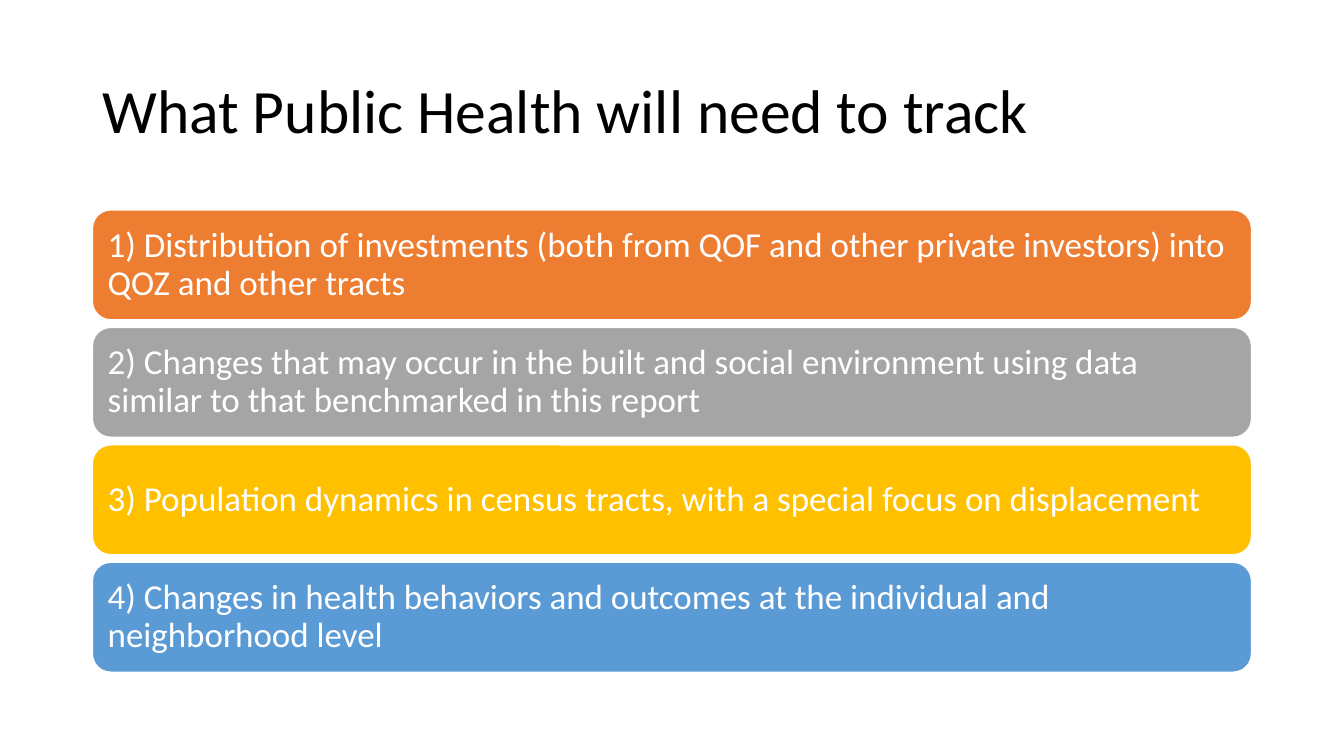
import dataclasses

import pptx
import pptx.dml.color
import pptx.enum.shapes
import pptx.enum.text
import pptx.util

Cm = pptx.util.Cm
LEFT, WIDTH = 2.33, 29.21
TOP, HEIGHT, PITCH = 5.29, 2.77, 2.96


@dataclasses.dataclass
class Band:
    text: str
    fill: str


BANDS = [
    Band("1) Distribution of investments (both from QOF and other private investors) "
         "into QOZ and other tracts", "ED7D31"),
    Band("2) Changes that may occur in the built and social environment using data "
         "similar to that benchmarked in this report", "A5A5A5"),
    Band("3) Population dynamics in census tracts, with a special focus on "
         "displacement", "FFC000"),
    Band("4) Changes in health behaviors and outcomes at the individual and "
         "neighborhood level", "5B9BD5"),
]


def paint(color: pptx.dml.color.ColorFormat, code: str) -> None:
    color.rgb = pptx.dml.color.RGBColor.from_string(code)


def write(shape, text: str, *, size: float, color: str, inset: float = 0.25) -> None:
    frame = shape.text_frame
    frame.word_wrap = True
    frame.auto_size = pptx.enum.text.MSO_AUTO_SIZE.NONE
    frame.vertical_anchor = pptx.enum.text.MSO_ANCHOR.MIDDLE
    frame.margin_left = frame.margin_right = Cm(inset)
    frame.margin_top = frame.margin_bottom = Cm(inset)
    para = frame.paragraphs[0]
    para.alignment = pptx.enum.text.PP_ALIGN.LEFT
    para.line_spacing = 0.9
    run = para.add_run()
    run.text = text
    run.font.name = "Calibri"
    run.font.size = pptx.util.Pt(size)
    paint(run.font.color, color)


def draw(slide, band: Band, top: float) -> None:
    shape = slide.shapes.add_shape(
        pptx.enum.shapes.MSO_SHAPE.ROUNDED_RECTANGLE,
        Cm(LEFT), Cm(top), Cm(WIDTH), Cm(HEIGHT))
    shape.shadow.inherit = False
    shape.fill.solid()
    paint(shape.fill.fore_color, band.fill)
    paint(shape.line.color, "FFFFFF")
    shape.line.width = pptx.util.Pt(1)
    write(shape, band.text, size=25, color="FFFFFF")


def main() -> None:
    deck = pptx.Presentation()
    deck.slide_width, deck.slide_height = Cm(33.87), Cm(19.05)
    slide = deck.slides.add_slide(deck.slide_layouts.get_by_name("Title Only"))
    title = slide.shapes.title
    title.left, title.top = Cm(LEFT), Cm(1.01)
    title.width, title.height = Cm(WIDTH), Cm(3.68)
    write(title, "What Public Health will need to track", size=44, color="000000")
    for row, band in enumerate(BANDS):
        draw(slide, band, TOP + row * PITCH)
    deck.save("out.pptx")


if __name__ == "__main__":
    main()
